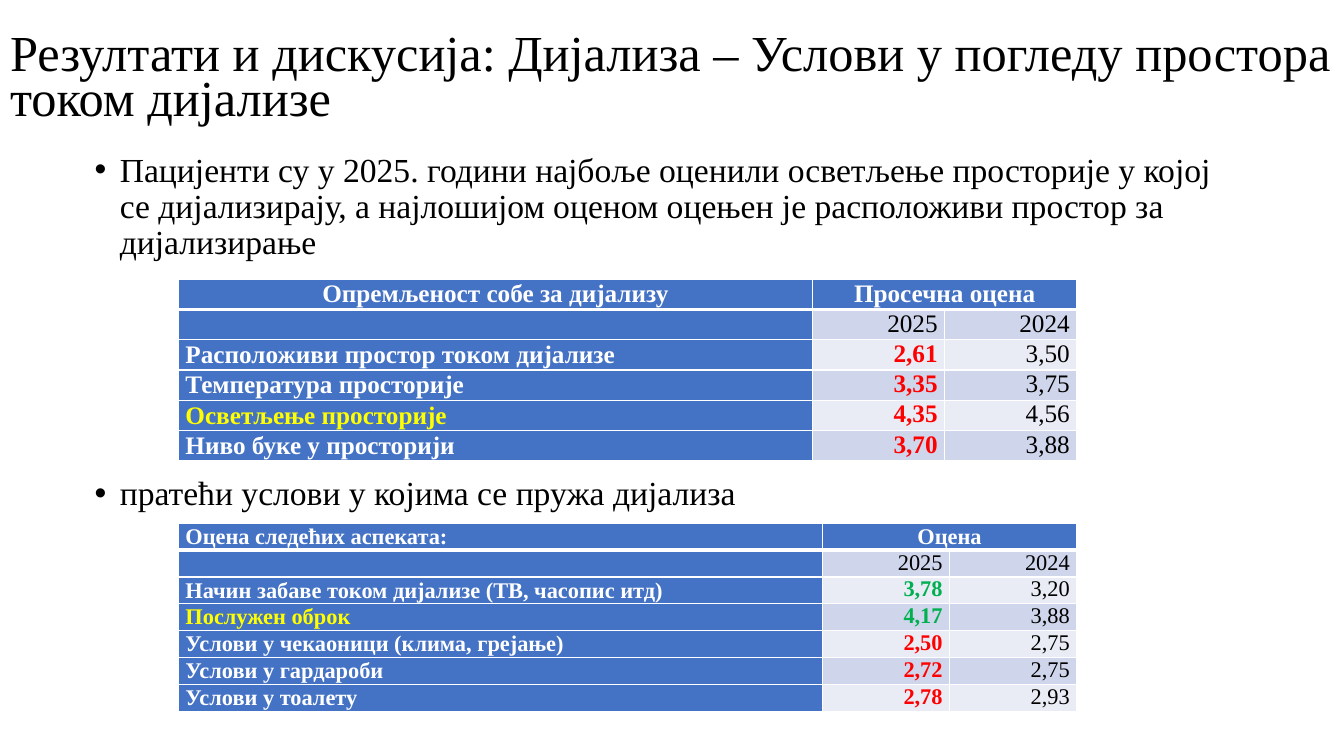
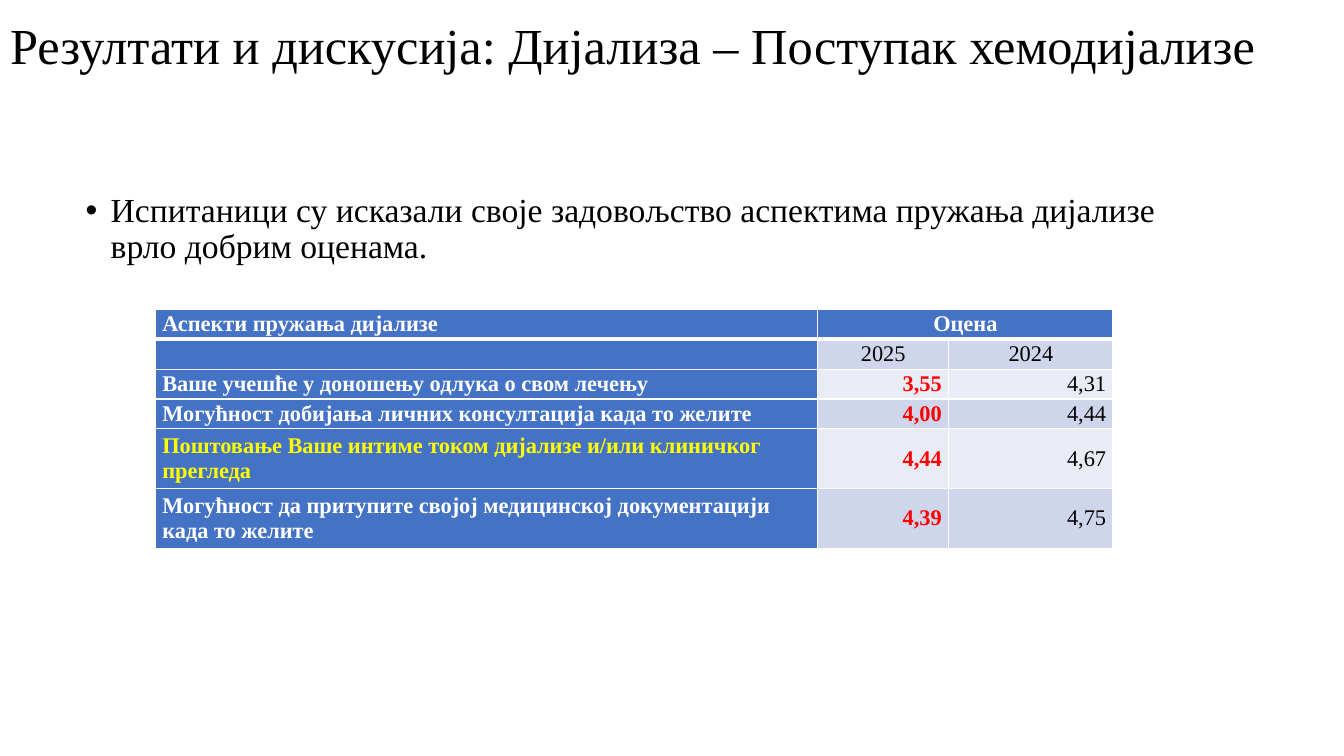
from dataclasses import dataclass
from lxml import etree
from pptx import Presentation
from pptx import util as u
from pptx.dml.color import RGBColor
from pptx.enum import text
from pptx.oxml.ns import qn

LEFT, CENTER, RIGHT = text.PP_ALIGN.LEFT, text.PP_ALIGN.CENTER, text.PP_ALIGN.RIGHT
TOP, MIDDLE = text.MSO_ANCHOR.TOP, text.MSO_ANCHOR.MIDDLE
SLIDE_W, SLIDE_H = 13.33, 7.5


@dataclass(frozen=True)
class Theme:
    font: str = "Times New Roman"
    ink: str = "000000"
    paper: str = "FFFFFF"
    header: str = "4472C4"
    bands: tuple = ("CFD5EA", "E9EBF5")
    highlight: str = "FFFF00"
    better: str = "00B050"
    worse: str = "FF0000"
    title_size: float = 36
    body_size: float = 24
    rule: float = 1
    header_rule: float = 3


THEME = Theme()


@dataclass(frozen=True)
class Box:
    left: float
    top: float
    width: float
    height: float

    def emu(self):
        return [u.Inches(n) for n in (self.left, self.top, self.width, self.height)]


@dataclass(frozen=True)
class Ratings:
    """A table of average ratings; each row holds label, 2025 and 2024."""
    heading: str
    score_heading: str
    rows: tuple
    best: str
    columns: tuple
    size: float
    heading_align: int = LEFT
    year_align: int = RIGHT
    score_anchor: int = TOP
    tall_rows: tuple = ()


def style_run(run, size, color=THEME.ink, bold=False):
    run.font.name = THEME.font
    run.font.size = u.Pt(size)
    run.font.bold = bold
    run.font.color.rgb = RGBColor.from_string(color)


def add_title(slide, wording, box, anchor, spacing):
    title = slide.shapes.title
    title.left, title.top, title.width, title.height = box.emu()
    frame = title.text_frame
    frame.text = wording
    frame.word_wrap = True
    frame.auto_size = text.MSO_AUTO_SIZE.NONE
    frame.vertical_anchor = anchor
    paragraph = frame.paragraphs[0]
    paragraph.alignment = LEFT
    paragraph.line_spacing = spacing
    style_run(paragraph.runs[0], THEME.title_size)


def add_bullet(slide, wording, box):
    frame = slide.shapes.add_textbox(*box.emu()).text_frame
    frame.word_wrap = True
    frame.text = wording
    paragraph = frame.paragraphs[0]
    paragraph.line_spacing = 0.9
    # Hanging bullet
    properties = paragraph._p.get_or_add_pPr()
    properties.set("marL", str(u.Inches(0.25)))
    properties.set("indent", str(-u.Inches(0.25)))
    etree.SubElement(properties, qn("a:buFont"), typeface="Arial")
    etree.SubElement(properties, qn("a:buChar"), char="•")
    style_run(paragraph.runs[0], THEME.body_size)


def add_borders(cell, top, bottom):
    properties = cell._tc.get_or_add_tcPr()
    widths = {"L": THEME.rule, "R": THEME.rule, "T": top, "B": bottom}
    for side, width in widths.items():
        line = etree.SubElement(properties, qn(f"a:ln{side}"), w=str(u.Pt(width)))
        fill = etree.SubElement(line, qn("a:solidFill"))
        etree.SubElement(fill, qn("a:srgbClr"), val=THEME.paper)


def fill_cell(cell, wording, row, fill, size, color, bold, align, anchor):
    add_borders(cell,
                top=THEME.header_rule if row == 1 else THEME.rule,
                bottom=THEME.header_rule if row == 0 else THEME.rule)
    cell.fill.solid()
    cell.fill.fore_color.rgb = RGBColor.from_string(fill)
    cell.margin_left = cell.margin_right = u.Inches(0.07)
    cell.margin_top = cell.margin_bottom = 0
    cell.vertical_anchor = anchor
    paragraph = cell.text_frame.paragraphs[0]
    paragraph.alignment = align
    if wording:
        paragraph.text = wording
        style_run(paragraph.runs[0], size, color, bold)
    else:
        # Keeps an empty cell from stretching its row
        etree.SubElement(paragraph._p, qn("a:endParaRPr"), sz=str(int(size * 100)))


def number(score):
    return float(score.replace(",", "."))


def add_ratings(slide, ratings, box):
    lines = ((ratings.heading, ratings.score_heading, ""),
             ("", "2025", "2024")) + ratings.rows
    table = slide.shapes.add_table(len(lines), 3, *box.emu()).table
    table.first_row = table.horz_banding = False

    # Grid: columns by share, tall rows twice as high
    for column, share in zip(table.columns, ratings.columns):
        column.width = u.Inches(box.width * share / sum(ratings.columns))
    weights = [2 if line[0] in ratings.tall_rows else 1 for line in lines]
    for table_row, weight in zip(table.rows, weights):
        table_row.height = u.Inches(box.height * weight / sum(weights))
    table.cell(0, 1).merge(table.cell(0, 2))

    for row, line in enumerate(lines):
        for col, wording in enumerate(line):
            fill, color, bold = THEME.header, THEME.paper, True
            align, anchor = LEFT, MIDDLE
            if row == 0:
                align = CENTER if col else ratings.heading_align
            elif col == 0:
                if wording == ratings.best:
                    color = THEME.highlight
            else:
                fill, anchor = THEME.bands[(row + 1) % 2], ratings.score_anchor
                align = ratings.year_align if row == 1 else RIGHT
                color, bold = THEME.ink, False
                # The 2025 score shows the change since 2024
                if row > 1 and col == 1:
                    rising = number(line[1]) > number(line[2])
                    color, bold = THEME.better if rising else THEME.worse, True
            fill_cell(table.cell(row, col), wording, row, fill, ratings.size,
                      color, bold, align, anchor)


ROOM = Ratings(
    "Опремљеност собе за дијализу", "Просечна оцена",
    (("Расположиви простор током дијализе", "2,61", "3,50"),
     ("Температура просторије", "3,35", "3,75"),
     ("Осветљење просторије", "4,35", "4,56"),
     ("Ниво буке у просторији", "3,70", "3,88")),
    best="Осветљење просторије", columns=(6.29, 1.31, 1.31), size=18,
    heading_align=CENTER)

SURROUNDINGS = Ratings(
    "Оцена следећих аспеката:", "Оцена",
    (("Начин забаве током дијализе (ТВ, часопис итд)", "3,78", "3,20"),
     ("Послужен оброк", "4,17", "3,88"),
     ("Услови у чекаоници (клима, грејање)", "2,50", "2,75"),
     ("Услови у гардароби", "2,72", "2,75"),
     ("Услови у тоалету", "2,78", "2,93")),
    best="Послужен оброк", columns=(6.38, 1.26, 1.26), size=16)

PRIVACY = "Поштовање Ваше интиме током дијализе и/или клиничког прегледа"
RECORDS = "Могућност да притупите својој медицинској документацији када то желите"
PROCEDURE = Ratings(
    "Аспекти пружања дијализе", "Оцена",
    (("Ваше учешће у доношењу одлука о свом лечењу", "3,55", "4,31"),
     ("Могућност добијања личних консултација када то желите", "4,00", "4,44"),
     (PRIVACY, "4,44", "4,67"),
     (RECORDS, "4,39", "4,75")),
    best=PRIVACY, columns=(6.57, 1.3, 1.63), size=16, year_align=CENTER,
    score_anchor=MIDDLE, tall_rows=(PRIVACY, RECORDS))


def add_results_slide(deck, title, title_box, anchor, spacing, sections):
    """Title, then sections of one bullet over one table."""
    slide = deck.slides.add_slide(deck.slide_layouts[5])
    add_title(slide, title, title_box, anchor, spacing)
    for bullet, bullet_box, ratings, table_box in sections:
        add_bullet(slide, bullet, bullet_box)
        add_ratings(slide, ratings, table_box)


def main():
    deck = Presentation()
    deck.slide_width, deck.slide_height = u.Inches(SLIDE_W), u.Inches(SLIDE_H)

    # Conditions of the dialysis space
    add_results_slide(
        deck,
        "Резултати и дискусија: Дијализа – Услови у погледу простора током дијализе",
        Box(0, 0.1, SLIDE_W, 1.39), MIDDLE, 0.75,
        (("Пацијенти су у 2025. години најбоље оценили осветљење просторије у којој "
          "се дијализирају, а најлошијом оценом оцењен је расположиви простор за "
          "дијализирање",
          Box(0.84, 1.47, 11.5, 1.2), ROOM, Box(1.77, 2.77, 8.91, 1.77)),
         ("пратећи услови у којима се пружа дијализа",
          Box(0.84, 4.68, 11.5, 0.45), SURROUNDINGS, Box(1.77, 5.19, 8.91, 1.74))))

    # Haemodialysis procedure
    add_results_slide(
        deck, "Резултати и дискусија: Дијализа – Поступак хемодијализе",
        Box(0, 0.09, SLIDE_W, 0.71), TOP, 1,
        (("Испитаници су исказали своје задовољство аспектима пружања дијализе "
          "врло добрим оценама.",
          Box(0.75, 1.87, 11.5, 0.9), PROCEDURE, Box(1.54, 3.07, 9.5, 2.37)),))

    deck.save("out.pptx")


if __name__ == "__main__":
    main()
